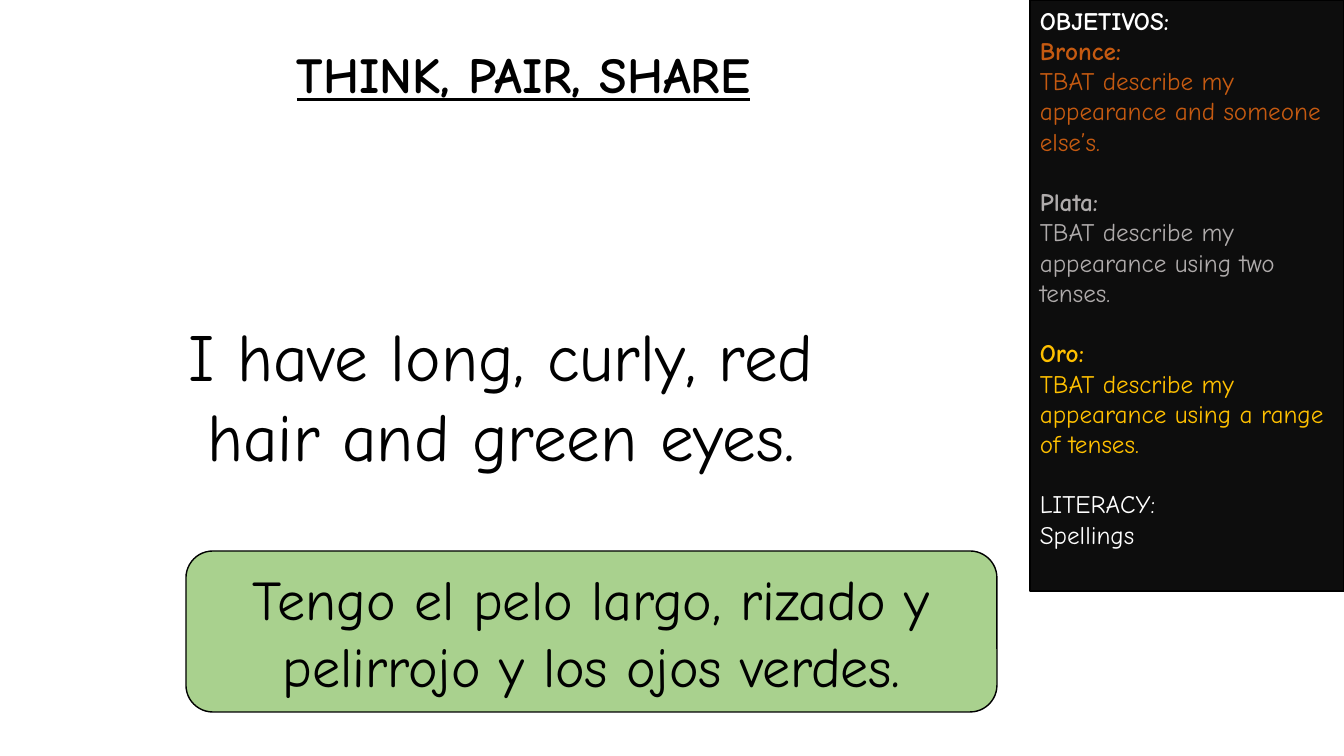
"""Build a think-pair-share slide with a panel of lesson objectives."""
from pptx import Presentation
from pptx import util as u
from pptx.dml.color import RGBColor
from pptx.enum import shapes, text

PX = 914400 / 100.8
THEME = {
    "font": "Comic Neue",
    "black": "000000", "white": "FFFFFF", "panel": "0D0D0D", "green": "A9D18E",
    "bronze": "C55A11", "silver": "AFABAB", "gold": "FFC000",
    "title": 36, "goal": 18, "phrase": 48, "answer": 40, "gap": 21.6,
}


def add_box(slide, box, kind=None, fill=None):
    """Add a text box, or an outlined shape when a kind is given."""
    place = [u.Emu(round(n * PX)) for n in box]
    if kind is None:
        shape = slide.shapes.add_textbox(*place)
    else:
        shape = slide.shapes.add_shape(kind, *place)
        shape.shadow.inherit = False
        shape.fill.solid()
        shape.fill.fore_color.rgb = RGBColor.from_string(THEME[fill])
        shape.line.color.rgb = RGBColor.from_string(THEME["black"])
        shape.line.width = u.Pt(1)
    shape.text_frame.word_wrap = True
    return shape.text_frame


def style(para, words, size, color, bold=False, align=text.PP_ALIGN.CENTER):
    """Fill a paragraph and set its font."""
    para.text = words
    para.alignment = align
    font = para.font
    font.name = THEME["font"]
    font.size = u.Pt(THEME[size])
    font.bold = bold
    font.color.rgb = RGBColor.from_string(THEME[color])


deck = Presentation()
deck.slide_width = u.Emu(round(1344 * PX))
deck.slide_height = u.Emu(round(756 * PX))
slide = deck.slides.add_slide(deck.slide_layouts[6])

title = add_box(slide, (216, 38, 615, 72)).paragraphs[0]
style(title, "THINK, PAIR, SHARE", "title", "black", bold=True)
title.font.underline = True

goals = [
    ("OBJETIVOS:", "white", True, False),
    ("Bronce:", "bronze", True, False),
    ("TBAT describe my appearance and someone else’s.", "bronze", False, False),
    ("Plata:", "silver", True, True),
    ("TBAT describe my appearance using two tenses.", "silver", False, False),
    ("Oro:", "gold", True, True),
    ("TBAT describe my appearance using a range of tenses.", "gold", False, False),
    ("LITERACY:", "white", False, True),
    ("Spellings", "white", False, False),
]
panel = add_box(slide, (1030, 0, 314, 591), shapes.MSO_SHAPE.RECTANGLE, "panel")
panel.vertical_anchor = text.MSO_ANCHOR.TOP
for i, (words, color, bold, gap) in enumerate(goals):
    para = panel.add_paragraph() if i else panel.paragraphs[0]
    style(para, words, "goal", color, bold, text.PP_ALIGN.LEFT)
    if gap:
        para.space_before = u.Pt(THEME["gap"])

phrase = add_box(slide, (144, 309, 714, 173))
style(phrase.paragraphs[0], "I have long, curly, red hair and green eyes.", "phrase", "black")

answer = add_box(slide, (186, 551, 811, 161), shapes.MSO_SHAPE.ROUNDED_RECTANGLE, "green")
answer.vertical_anchor = text.MSO_ANCHOR.MIDDLE
style(answer.paragraphs[0], "Tengo el pelo largo, rizado y pelirrojo y los ojos verdes.",
      "answer", "black")

deck.save("out.pptx")
